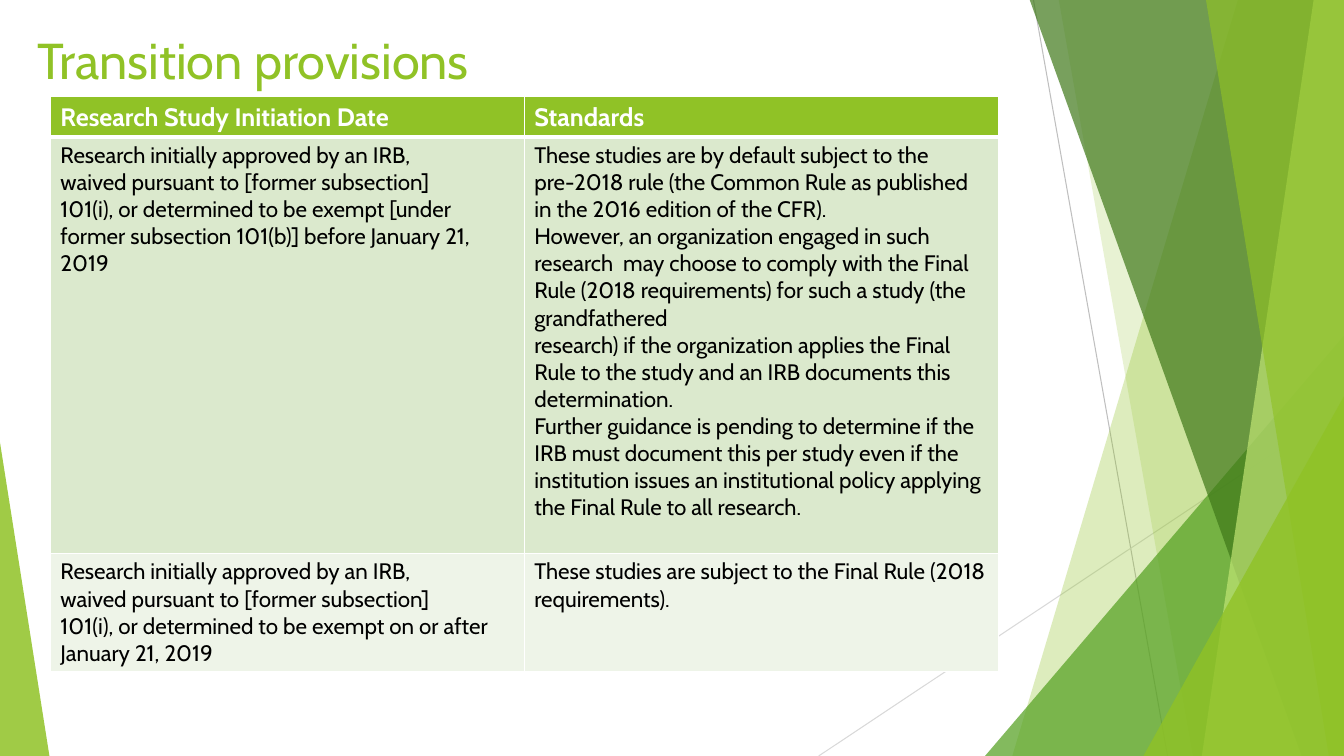
"""Builds the "Transition provisions" slide with its table and green facets."""
from pptx import Presentation
from pptx.dml.color import RGBColor
from pptx.enum.shapes import MSO_CONNECTOR, MSO_SHAPE
from pptx.enum.text import MSO_ANCHOR
from pptx.oxml.ns import qn
from pptx.util import Inches, Pt
from lxml import etree

STRAIGHT = MSO_CONNECTOR.STRAIGHT
TRIANGLE = MSO_SHAPE.ISOSCELES_TRIANGLE
TOP = MSO_ANCHOR.TOP

WIDTH, HEIGHT = 13.33, 7.5
FACET_TOP = -0.01
FONT = "Cabin"
GREEN, WHITE = "90C226", "FFFFFF"

TITLE = "Transition provisions"
TITLE_BOX = (0.27, 0.24, 9.4, 0.87)
TITLE_FORMAT = {"size": Pt(36), "bold": False, "color": GREEN}

ROWS = [
    (["Research Study Initiation Date"], ["Standards"]),
    (
        [
            "Research initially approved by an IRB,",
            "waived pursuant to [former subsection]",
            "101(i), or determined to be exempt [under former subsection 101(b)] before January 21, 2019",
        ],
        [
            "These studies are by default subject to the pre-2018 rule (the Common Rule as published in the 2016 edition of the CFR).",
            "However, an organization engaged in such research  may choose to comply with the Final Rule (2018 requirements) for such a study (the grandfathered",
            "research) if the organization applies the Final Rule to the study and an IRB documents this determination.",
            "Further guidance is pending to determine if the IRB must document this per study even if the institution issues an institutional policy applying the Final Rule to all research.",
        ],
    ),
    (
        [
            "Research initially approved by an IRB,",
            "waived pursuant to [former subsection]",
            "101(i), or determined to be exempt on or after January 21, 2019",
        ],
        ["These studies are subject to the Final Rule (2018 requirements)."],
    ),
]
TABLE_AT = (0.5, 0.96)
COLUMN_WIDTH = 4.7
ROW_HEIGHTS = [0.4, 4.13, 1.17]
ROW_FILLS = [GREEN, "DBE9CD", "EEF4E8"]
HEADER_FORMAT = {"size": Pt(18), "bold": True, "color": WHITE}
BODY_FORMAT = {"size": Pt(16), "bold": False, "color": "000000"}

THIN_LINES = [
    ((10.25, 0), (11.58, HEIGHT), "BFBFBF"),
    ((WIDTH, 4.03), (8.12, HEIGHT), "D9D9D9"),
]
# kind, geometry, colour, opacity
FACETS = [
    ("band", (12.28, 10.04), GREEN, 30),
    ("band", (10.5, 11.83), GREEN, 20),
    ("triangle", (9.77, 3.33, 3.56, 1), "54A021", 72),
    ("band", (10.21, 12.91), "3F7819", 70),
    ("band", (13.03, 11.92), "C0E474", 70),
    ("band", (11.96, 13.18), GREEN, 65),
    ("triangle", (11.34, 3.93, 1.99, 1), GREEN, 80),
    ("triangle", (0, 4.39, 0.49, 0), GREEN, 85),
]


def rgb(color):
    return RGBColor.from_string(color)


def write(tf, paragraphs, fmt):
    for i, text in enumerate(paragraphs):
        p = tf.paragraphs[0] if i == 0 else tf.add_paragraph()
        r = p.add_run()
        r.text = text
        r.font.name = FONT
        for key, value in fmt.items():
            if key == "color":
                r.font.color.rgb = rgb(value)
            else:
                setattr(r.font, key, value)


def add_thin_line(s, start, end, color):
    line = s.shapes.add_connector(STRAIGHT, *map(Inches, start + end))
    line.line.color.rgb = rgb(color)
    line.line.width = Pt(0.75)
    etree.SubElement(line.line._get_or_add_ln().getparent(), qn("a:effectLst"))


def add_band(s, top_x, bottom_x):
    outline = s.shapes.build_freeform(Inches(top_x), Inches(FACET_TOP))
    corners = [(WIDTH, FACET_TOP), (WIDTH, HEIGHT), (bottom_x, HEIGHT)]
    outline.add_line_segments([(Inches(x), Inches(y)) for x, y in corners])
    return outline.convert_to_shape()


def add_triangle(s, left, top, width, apex):
    box = map(Inches, (left, top, width, HEIGHT - top))
    sp = s.shapes.add_shape(TRIANGLE, *box)
    sp.adjustments[0] = apex
    return sp


def add_facet(s, kind, geometry, color, opacity):
    sp = {"band": add_band, "triangle": add_triangle}[kind](s, *geometry)
    sp.shadow.inherit = False
    sp.line.fill.background()
    sp.fill.solid()
    sp.fill.fore_color.rgb = rgb(color)
    clr = sp._element.spPr.find(qn("a:solidFill")).find(qn("a:srgbClr"))
    etree.SubElement(clr, qn("a:alpha"), val=str(opacity * 1000))


def set_borders(cell, widths):
    tcPr = cell._tc.get_or_add_tcPr()
    for side, width in widths.items():
        ln = etree.SubElement(tcPr, qn(f"a:ln{side}"), w=str(Pt(width)))
        fill = etree.SubElement(ln, qn("a:solidFill"))
        etree.SubElement(fill, qn("a:srgbClr"), val=WHITE)


def add_provisions_table(s):
    columns = len(ROWS[0])
    size = (COLUMN_WIDTH * columns, sum(ROW_HEIGHTS))
    frame = s.shapes.add_table(len(ROWS), columns, *map(Inches, TABLE_AT + size))
    table = frame.table
    for column in table.columns:
        column.width = Inches(COLUMN_WIDTH)
    for i, (texts, height, fill) in enumerate(zip(ROWS, ROW_HEIGHTS, ROW_FILLS)):
        table.rows[i].height = Inches(height)
        borders = {"L": 1, "R": 1, "T": 3 if i == 1 else 1, "B": 3 if i == 0 else 1}
        for cell, paragraphs in zip(table.rows[i].cells, texts):
            set_borders(cell, borders)
            cell.fill.solid()
            cell.fill.fore_color.rgb = rgb(fill)
            write(cell.text_frame, paragraphs, BODY_FORMAT if i else HEADER_FORMAT)


def main():
    prs = Presentation()
    prs.slide_width, prs.slide_height = Inches(WIDTH), Inches(HEIGHT)
    s = prs.slides.add_slide(prs.slide_layouts[6])
    for line in THIN_LINES:
        add_thin_line(s, *line)
    for facet in FACETS:
        add_facet(s, *facet)
    tf = s.shapes.add_textbox(*map(Inches, TITLE_BOX)).text_frame
    tf.word_wrap = True
    tf.vertical_anchor = TOP
    write(tf, [TITLE], TITLE_FORMAT)
    add_provisions_table(s)
    prs.save("out.pptx")


if __name__ == "__main__":
    main()
